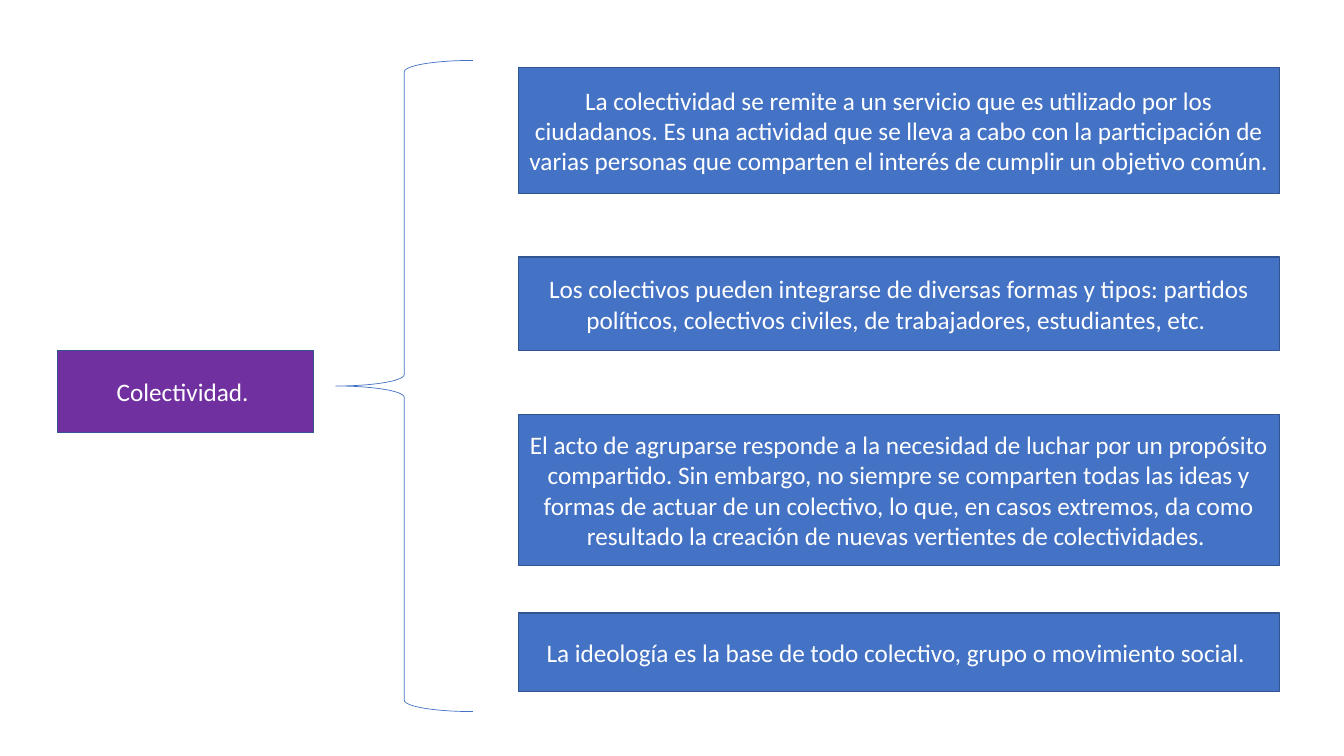
from pptx import Presentation
from pptx.dml.color import RGBColor
from pptx.enum.shapes import MSO_SHAPE as Shape
from pptx.enum.text import MSO_ANCHOR as Anchor, PP_ALIGN as Align
from pptx.util import Pt

PX = 9144  # EMU per px, 100 px to the inch

WHITE = RGBColor(0xFF, 0xFF, 0xFF)
PURPLE = RGBColor(0x70, 0x30, 0xA0)
BLUE = RGBColor(0x44, 0x72, 0xC4)
NAVY = RGBColor(0x32, 0x54, 0x91)

TOPIC = "Colectividad. "
# Top within the column, height, text
IDEAS = [
    (0, 125, "La colectividad se remite a un servicio que es utilizado por los "
     "ciudadanos. Es una actividad que se lleva a cabo con la participación de "
     "varias personas que comparten el interés de cumplir un objetivo común. "),
    (188, 93, "Los colectivos pueden integrarse de diversas formas y tipos: "
     "partidos políticos, colectivos civiles, de trabajadores, estudiantes, etc. "),
    (344, 150, "El acto de agruparse responde a la necesidad de luchar por un "
     "propósito compartido. Sin embargo, no siempre se comparten todas las ideas "
     "y formas de actuar de un colectivo, lo que, en casos extremos, da como "
     "resultado la creación de nuevas vertientes de colectividades. "),
    (541, 78, "La ideología es la base de todo colectivo, grupo o movimiento "
     "social. "),
]


def add_shape(slide, kind, box, line, width):
    shape = slide.shapes.add_shape(kind, *(n * PX for n in box))
    shape.shadow.inherit = False
    shape.line.color.rgb = line
    shape.line.width = Pt(width)
    return shape


def add_label(slide, box, text, fill):
    label = add_shape(slide, Shape.RECTANGLE, box, NAVY, 1)
    label.fill.solid()
    label.fill.fore_color.rgb = fill
    frame = label.text_frame
    frame.word_wrap = True
    frame.vertical_anchor = Anchor.MIDDLE
    frame.text = text
    para = frame.paragraphs[0]
    para.alignment = Align.CENTER
    font = para.runs[0].font
    font.name = "Calibri"
    font.size = Pt(18)
    font.color.rgb = WHITE


def add_brace(slide, box):
    brace = add_shape(slide, Shape.LEFT_BRACE, box, BLUE, 0.5)
    brace.fill.background()


def add_ideas(slide, box):
    """Stack the idea boxes down a column of the given box."""
    left, top, width, _ = box
    for drop, height, text in IDEAS:
        add_label(slide, (left, top + drop, width, height), text, BLUE)


def main():
    deck = Presentation()
    deck.slide_width = 1333 * PX
    deck.slide_height = 750 * PX
    slide = deck.slides.add_slide(deck.slide_layouts[6])
    add_label(slide, (57, 348, 254, 81), TOPIC, PURPLE)
    add_ideas(slide, (514, 67, 755, 619))
    add_brace(slide, (333, 60, 136, 646))
    deck.save("out.pptx")


if __name__ == "__main__":
    main()
